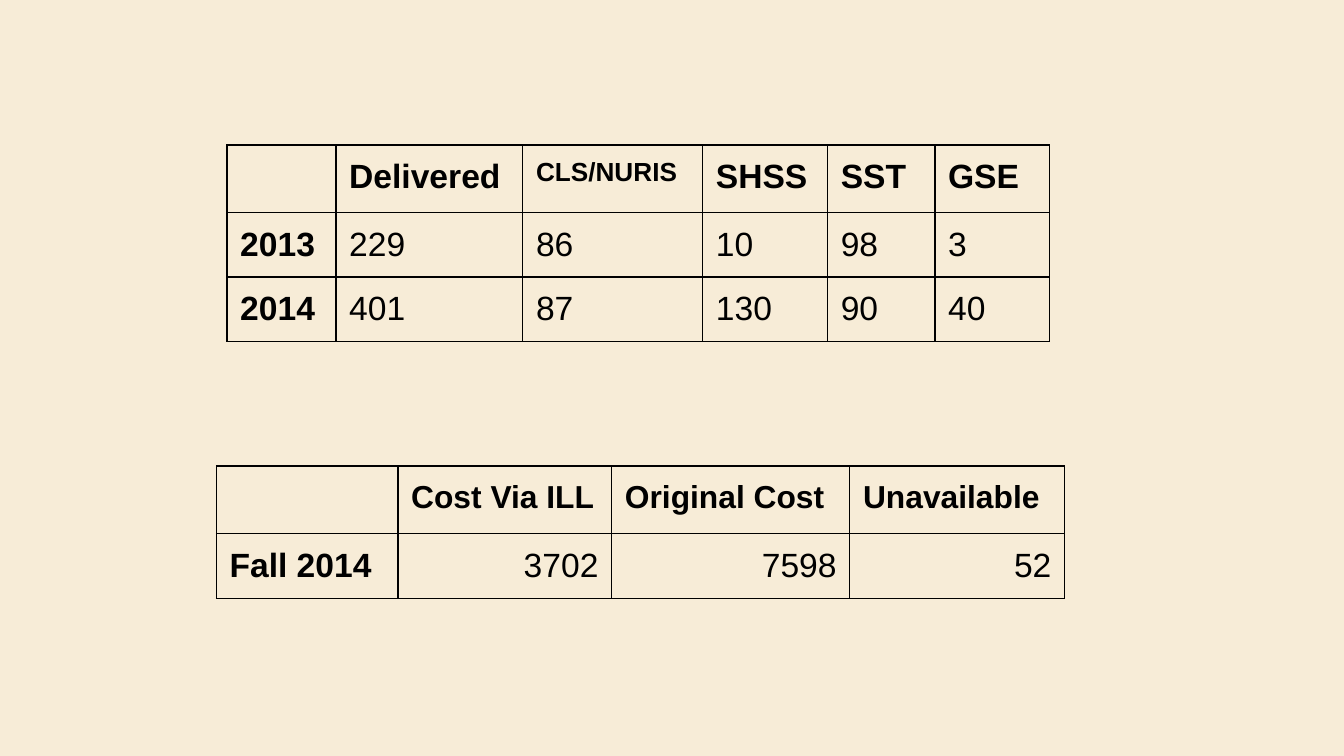
from lxml import etree
from pptx import Presentation
from pptx import util as u
from pptx.dml.color import RGBColor
from pptx.enum import text
from pptx.oxml.ns import qn

INK, PAPER = "000000", "F7ECD7"
ROW = 1.22  # row height, cm
TABLES = [
    dict(left=4.29, top=2.74, cols=[2.06, 3.53, 3.4, 2.36, 2.03, 2.16],
         head=18, small={"CLS/NURIS": 14}, align=text.PP_ALIGN.LEFT,
         rows=[["", "Delivered", "CLS/NURIS", "SHSS", "SST", "GSE"],
               ["2013", "229", "86", "10", "98", "3"],
               ["2014", "401", "87", "130", "90", "40"]]),
    dict(left=4.09, top=8.81, cols=[3.43, 4.04, 4.5, 4.06],
         head=17, small={}, align=text.PP_ALIGN.RIGHT,
         rows=[["", "Cost Via ILL", "Original Cost", "Unavailable"],
               ["Fall 2014", "3702", "7598", "52"]]),
]


def color(code):
    return RGBColor.from_string(code)


def write(cell, words, size=18, bold=False, align=text.PP_ALIGN.LEFT):
    par = cell.text_frame.paragraphs[0]
    par.alignment = align
    if words:
        run = par.add_run()
        run.text = words
        font = run.font
        font.name, font.size, font.bold = "Arial", u.Pt(size), bold
        font.color.rgb = color(INK)


def frame(cell):
    """Give the cell thin lines on all sides, even margins and no fill."""
    props = cell._tc.get_or_add_tcPr()
    for side in "LRTB":
        line = etree.SubElement(props, qn("a:ln" + side), w=str(u.Pt(0.75)))
        fill = etree.SubElement(line, qn("a:solidFill"))
        etree.SubElement(fill, qn("a:srgbClr"), val=INK)
    cell.fill.background()
    cell.margin_left = cell.margin_right = u.Cm(0.25)
    cell.margin_top = cell.margin_bottom = u.Cm(0.25)


def draw(slide, left, top, cols, head, small, align, rows):
    sizes = [left, top, sum(cols), ROW * len(rows)]
    grid = slide.shapes.add_table(len(rows), len(cols), *map(u.Cm, sizes)).table
    grid.first_row = grid.horz_banding = False
    for col, width in zip(grid.columns, cols):
        col.width = u.Cm(width)
    for r, row in enumerate(rows):
        grid.rows[r].height = u.Cm(ROW)
        for c, words in enumerate(row):
            cell = grid.cell(r, c)
            frame(cell)
            if r == 0:
                write(cell, words, size=small.get(words, head), bold=True)
            elif c == 0:
                write(cell, words, bold=True)
            else:
                write(cell, words, align=align)


def main():
    deck = Presentation()
    deck.slide_width, deck.slide_height = u.Cm(25.4), u.Cm(14.29)
    slide = deck.slides.add_slide(deck.slide_layouts[6])
    back = slide.background.fill
    back.solid()
    back.fore_color.rgb = color(PAPER)
    for table in TABLES:
        draw(slide, **table)
    deck.save("out.pptx")


if __name__ == "__main__":
    main()
